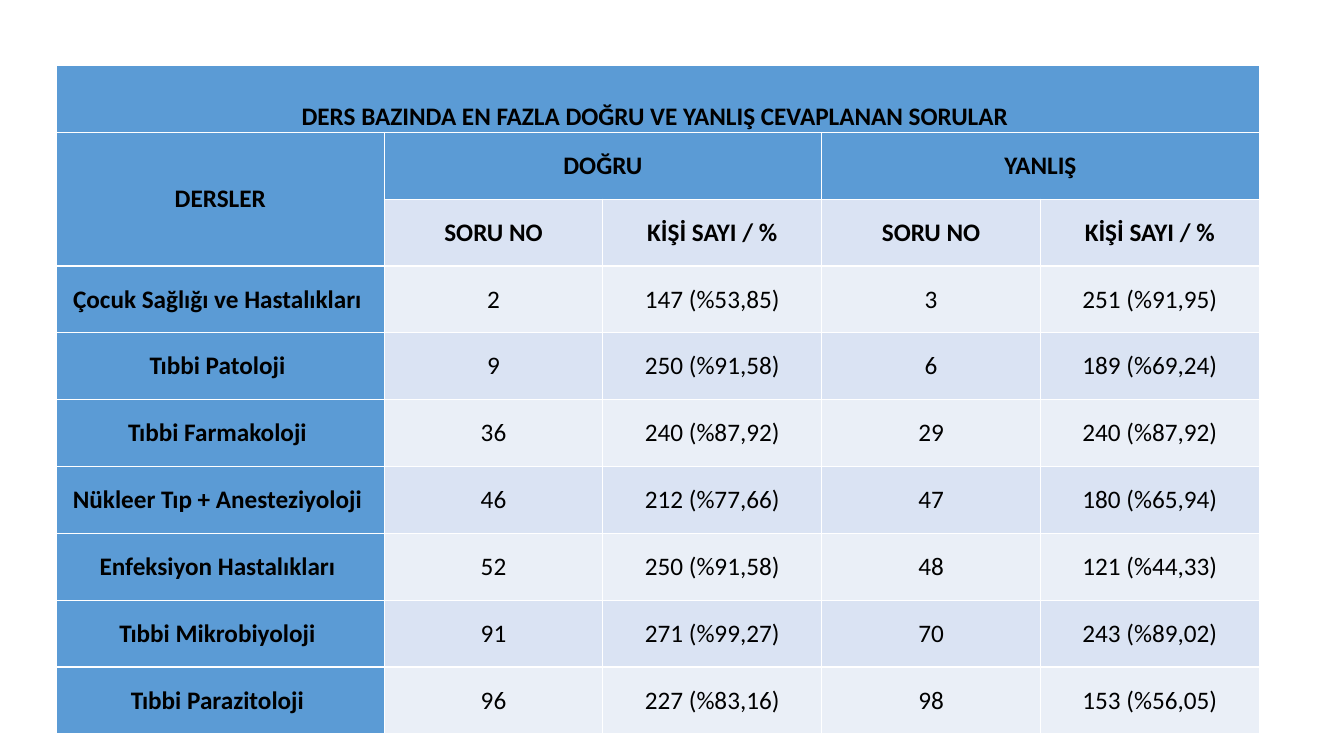
from lxml import etree
from pptx import Presentation
from pptx.dml.color import RGBColor
from pptx.enum import text
from pptx.oxml import ns
from pptx.util import Inches, Pt

HEADINGS = [
    ("DERS BAZINDA EN FAZLA DOĞRU VE YANLIŞ CEVAPLANAN SORULAR ", "", "", "", ""),
    ("DERSLER", "DOĞRU", "", "YANLIŞ", ""),
    ("", "SORU NO", "KİŞİ SAYI / %", "SORU NO", "KİŞİ SAYI / %"),
]
COURSES = [
    ("Çocuk Sağlığı ve Hastalıkları ", "2", "147 (%53,85)", "3", "251 (%91,95)"),
    ("Tıbbi Patoloji ", "9", "250 (%91,58)", "6", "189 (%69,24)"),
    ("Tıbbi Farmakoloji ", "36", "240 (%87,92)", "29", "240 (%87,92)"),
    ("Nükleer Tıp + Anesteziyoloji ", "46", "212 (%77,66)", "47", "180 (%65,94)"),
    ("Enfeksiyon Hastalıkları ", "52", "250 (%91,58)", "48", "121 (%44,33)"),
    ("Tıbbi Mikrobiyoloji ", "91", "271 (%99,27)", "70", "243 (%89,02)"),
    ("Tıbbi Parazitoloji ", "96", "227 (%83,16)", "98", "153 (%56,05)"),
]
MERGES = [((0, 0), (0, 4)), ((1, 0), (2, 0)), ((1, 1), (1, 2)), ((1, 3), (1, 4))]

BLUE = RGBColor(0x5B, 0x9B, 0xD5)
LAVENDER = RGBColor(0xDA, 0xE3, 0xF3)
PALE = RGBColor(0xEA, 0xEF, 0xF7)
BLACK = RGBColor(0, 0, 0)
WHITE = RGBColor(0xFF, 0xFF, 0xFF)

LEFT, TOP, WIDTH, HEIGHT = 0.56, 0.65, 11.93, 6.63
COURSE_WIDTH = 3.25


def add_borders(cell):
    properties = cell._tc.get_or_add_tcPr()
    for side in ("a:lnL", "a:lnR", "a:lnT", "a:lnB"):
        line = etree.SubElement(properties, ns.qn(side), w=str(Pt(1)))
        fill = etree.SubElement(line, ns.qn("a:solidFill"))
        etree.SubElement(fill, ns.qn("a:srgbClr"), val=str(WHITE))


def fill_color(row, column):
    if row < 2 or column == 0:
        return BLUE
    return PALE if row % 2 else LAVENDER


def style_cell(cell, wording, row, column):
    cell.margin_left = cell.margin_right = cell.margin_top = cell.margin_bottom = 0
    cell.vertical_anchor = text.MSO_ANCHOR.MIDDLE if row else text.MSO_ANCHOR.BOTTOM
    add_borders(cell)
    cell.fill.solid()
    cell.fill.fore_color.rgb = fill_color(row, column)
    cell.text = wording
    paragraph = cell.text_frame.paragraphs[0]
    paragraph.alignment = text.PP_ALIGN.CENTER
    paragraph.font.name = "Calibri"
    paragraph.font.size = Pt(18)
    paragraph.font.bold = row < len(HEADINGS) or column == 0
    paragraph.font.color.rgb = BLACK


def main():
    deck = Presentation()
    deck.slide_width, deck.slide_height = Inches(13.33), Inches(7.5)
    slide = deck.slides.add_slide(deck.slide_layouts[6])
    rows = HEADINGS + COURSES
    answers = slide.shapes.add_table(
        len(rows), len(rows[0]), Inches(LEFT), Inches(TOP), Inches(WIDTH), Inches(HEIGHT)
    ).table
    answers.first_row = answers.horz_banding = False

    answer_width = (WIDTH - COURSE_WIDTH) / (len(rows[0]) - 1)
    for index, column in enumerate(answers.columns):
        column.width = Inches(answer_width if index else COURSE_WIDTH)
    for row, wordings in enumerate(rows):
        answers.rows[row].height = Inches(HEIGHT / len(rows))
        for column, wording in enumerate(wordings):
            style_cell(answers.cell(row, column), wording, row, column)
    for first, last in MERGES:
        answers.cell(*first).merge(answers.cell(*last))

    deck.save("out.pptx")


if __name__ == "__main__":
    main()
